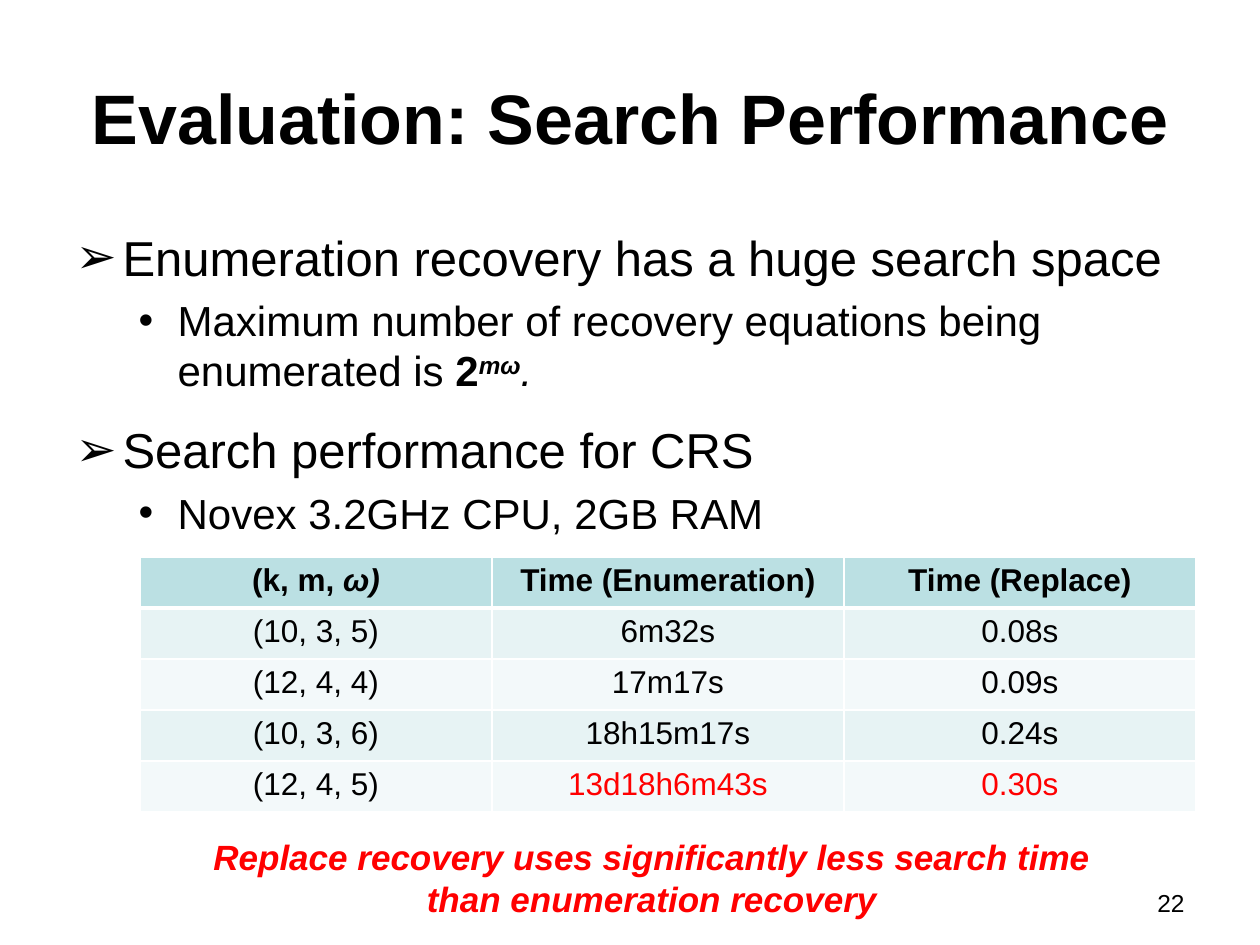
from dataclasses import dataclass

import pptx
import pptx.dml.color
import pptx.enum.text
import pptx.oxml
import pptx.oxml.ns
import pptx.util

PX = 914400 / 126  # EMU per pixel
FONT = "Arial"
COLORS = {"text": "000000", "accent": "FF0000", "border": "FFFFFF",
          "header": "BBE0E3", "odd": "E7F3F4", "even": "F3F9FA"}
ALIGN = pptx.enum.text.PP_ALIGN
ANCHOR = pptx.enum.text.MSO_ANCHOR


@dataclass(frozen=True)
class Span:
    text: str
    bold: bool = False
    italic: bool = False
    superscript: bool = False


@dataclass(frozen=True)
class Level:
    bullet: str
    size: int
    margin: int
    hanging: int
    before: int  # space before, percent of a line


@dataclass(frozen=True)
class Item:
    level: int
    spans: tuple


LEVELS = (Level("➢", 28, 47, 47, 50), Level("•", 24, 102, 39, 20))
ITEMS = (
    Item(0, (Span("Enumeration recovery has a huge search space"),)),
    Item(1, (Span("Maximum number of recovery equations being enumerated is "),
             Span("2", bold=True),
             Span("mω", bold=True, italic=True, superscript=True),
             Span(".", italic=True))),
    Item(0, (Span("Search performance for CRS"),)),
    Item(1, (Span("Novex 3.2GHz CPU, 2GB RAM"),)),
)
HEADER = (
    (Span("(k, m, ", bold=True), Span("ω)", bold=True, italic=True)),
    (Span("Time (Enumeration)", bold=True),),
    (Span("Time (Replace)", bold=True),),
)
RESULTS = (
    ("(10, 3, 5)", "6m32s", "0.08s"),
    ("(12, 4, 4)", "17m17s", "0.09s"),
    ("(10, 3, 6)", "18h15m17s", "0.24s"),
    ("(12, 4, 5)", "13d18h6m43s", "0.30s"),
)
COL_WIDTH, ROW_HEIGHT = 352, 51


def px(n: int) -> pptx.util.Emu:
    return pptx.util.Emu(round(n * PX))


def rgb(name: str) -> pptx.dml.color.RGBColor:
    return pptx.dml.color.RGBColor.from_string(COLORS[name])


def add_text(p, text: str, *, size: int, color: str = "text", bold: bool = False,
             italic: bool = False, superscript: bool = False) -> None:
    r = p.add_run()
    r.text = text
    r.font.name, r.font.size = FONT, pptx.util.Pt(size)
    r.font.bold, r.font.italic = bold, italic
    r.font.color.rgb = rgb(color)
    if superscript:
        r._r.get_or_add_rPr().set("baseline", "30000")


def add_spans(p, spans: tuple, *, size: int, color: str = "text") -> None:
    for s in spans:
        add_text(p, s.text, size=size, color=color, bold=s.bold, italic=s.italic,
                 superscript=s.superscript)


def place(sp, left: int, top: int, width: int, height: int) -> None:
    sp.left, sp.top, sp.width, sp.height = map(px, (left, top, width, height))


def add_xml(parent, xml: str) -> None:
    tag, rest = xml.split(" ", 1)
    parent.append(pptx.oxml.parse_xml(f"<a:{tag} {pptx.oxml.ns.nsdecls('a')} {rest}"))


def format_item(p, level: Level) -> None:
    """Set the indent, spacing and bullet of a list paragraph."""
    pPr = p._p.get_or_add_pPr()
    pPr.set("marL", str(px(level.margin)))
    pPr.set("indent", str(px(-level.hanging)))
    add_xml(pPr, f'spcBef ><a:spcPct val="{level.before * 1000}"/></a:spcBef>')
    add_xml(pPr, f'buFont typeface="{FONT}"/>')
    add_xml(pPr, f'buChar char="{level.bullet}"/>')


def add_title(slide, text: str) -> None:
    sp = slide.shapes.title
    place(sp, 63, 38, 1134, 158)
    tf = sp.text_frame
    tf.vertical_anchor = ANCHOR.MIDDLE
    tf.paragraphs[0].alignment = ALIGN.CENTER
    add_text(tf.paragraphs[0], text, size=40, bold=True)


def add_list(slide, items: tuple) -> None:
    sp = slide.placeholders[1]
    place(sp, 63, 221, 1134, 294)
    tf = sp.text_frame
    tf.auto_size = pptx.enum.text.MSO_AUTO_SIZE.NONE
    for i, item in enumerate(items):
        p = tf.add_paragraph() if i else tf.paragraphs[0]
        p.level = item.level
        format_item(p, LEVELS[item.level])
        add_spans(p, item.spans, size=LEVELS[item.level].size)


def format_cell(cell, fill: str, top: int, bottom: int) -> None:
    """Set the fill and the border widths, in points."""
    tcPr = cell._tc.get_or_add_tcPr()
    for side, width in (("L", 1), ("R", 1), ("T", top), ("B", bottom)):
        add_xml(tcPr, f'ln{side} w="{pptx.util.Pt(width)}"><a:solidFill>'
                      f'<a:srgbClr val="{COLORS["border"]}"/></a:solidFill></a:ln{side}>')
    cell.fill.solid()
    cell.fill.fore_color.rgb = rgb(fill)


def add_results(slide) -> None:
    rows = (HEADER,) + tuple(tuple((Span(t),) for t in row) for row in RESULTS)
    n_rows, n_cols = len(rows), len(HEADER)
    table = slide.shapes.add_table(n_rows, n_cols, px(140), px(557),
                                   px(COL_WIDTH * n_cols), px(ROW_HEIGHT * n_rows)).table
    for col in table.columns:
        col.width = px(COL_WIDTH)
    for i, row in enumerate(rows):
        table.rows[i].height = px(ROW_HEIGHT)
        fill = "header" if i == 0 else "odd" if i % 2 else "even"
        for j, spans in enumerate(row):
            cell = table.cell(i, j)
            format_cell(cell, fill, top=3 if i == 1 else 1, bottom=3 if i == 0 else 1)
            p = cell.text_frame.paragraphs[0]
            p.alignment = ALIGN.CENTER
            highlight = i == n_rows - 1 and j > 0
            add_spans(p, spans, size=18, color="accent" if highlight else "text")


def add_label(slide, box: tuple, lines: tuple, *, align, wrap: bool = True, **fmt) -> None:
    sp = slide.shapes.add_textbox(*map(px, box))
    tf = sp.text_frame
    tf.word_wrap = wrap
    p = tf.paragraphs[0]
    p.alignment = align
    for i, line in enumerate(lines):
        if i:
            p.add_line_break()
        add_text(p, line, **fmt)


def main() -> None:
    prs = pptx.Presentation()
    prs.slide_width, prs.slide_height = px(1260), px(945)
    slide = prs.slides.add_slide(prs.slide_layouts[1])
    add_title(slide, "Evaluation: Search Performance")
    add_label(slide, (903, 882, 294, 44), ("22",), align=ALIGN.RIGHT, size=14)
    add_list(slide, ITEMS)
    add_results(slide)
    add_label(slide, (198, 829, 908, 97),
              ("Replace recovery uses significantly less search time",
               "than enumeration recovery"),
              align=ALIGN.CENTER, wrap=False, size=20, color="accent",
              bold=True, italic=True)
    prs.save("out.pptx")


if __name__ == "__main__":
    main()
